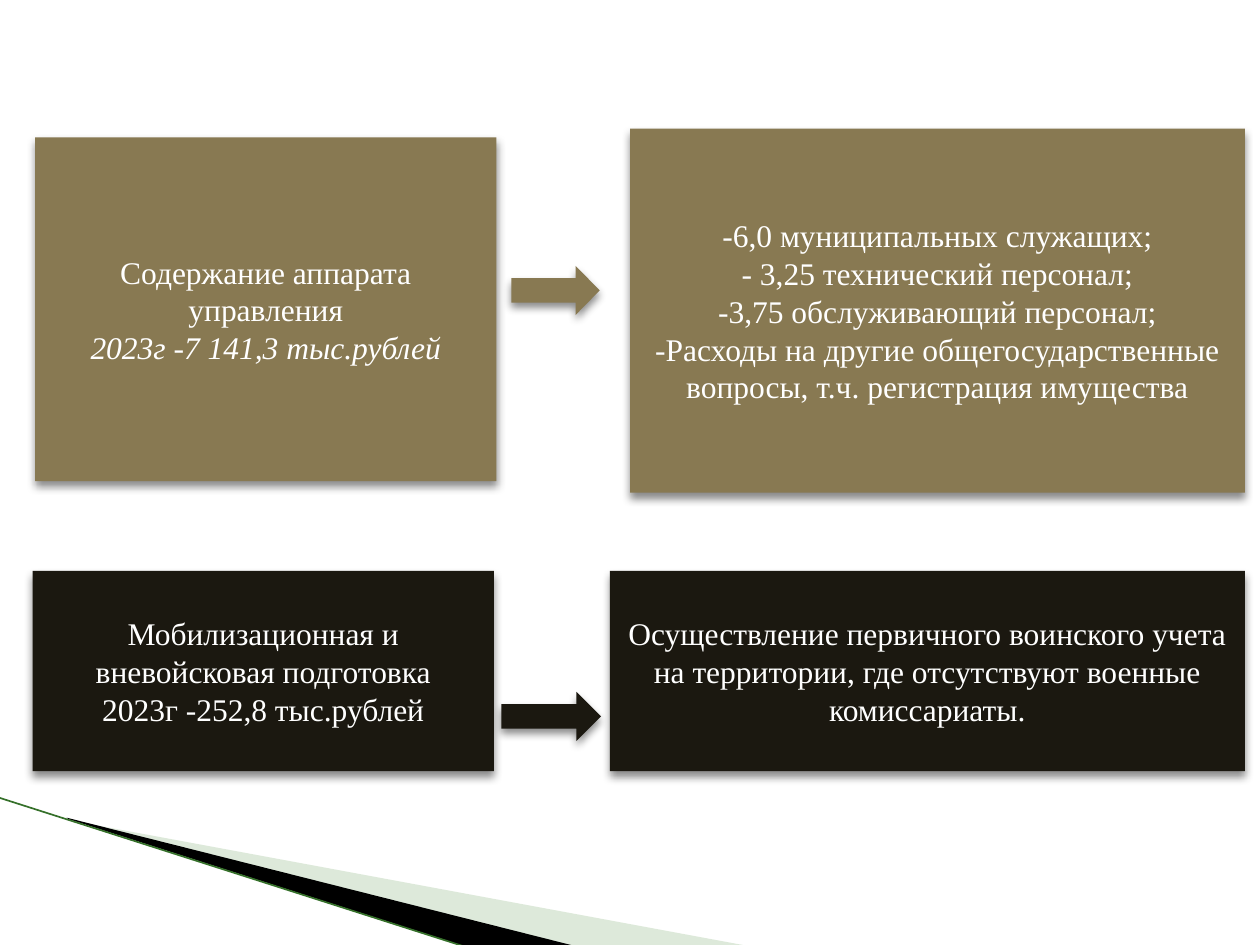
import lxml.etree
import pptx
import pptx.dml.color
import pptx.enum.shapes
import pptx.enum.text
import pptx.oxml.ns
import pptx.util

PX = 9144  # 100 px to the inch
THEME = {
    "olive": "887952", "dark": "1B1810", "text": "FFFFFF",
    "pale_wedge": "AACAA3", "black_wedge": "000000", "edge": "35702A",
    "shadow": "000000", "font": "Times New Roman", "size": 18,
}
qn = pptx.oxml.ns.qn
rgb = pptx.dml.color.RGBColor.from_string
PRESET = pptx.enum.shapes.MSO_SHAPE


def write(frame, text, size=THEME["size"], color=THEME["text"], italic_line=None):
    """Write centred lines into a frame, one paragraph each."""
    frame.word_wrap = True
    frame.vertical_anchor = pptx.enum.text.MSO_ANCHOR.MIDDLE
    for number, line in enumerate(text.split("\n")):
        paragraph = frame.paragraphs[0] if number == 0 else frame.add_paragraph()
        paragraph.alignment = pptx.enum.text.PP_ALIGN.CENTER
        run = paragraph.add_run()
        run.text = line
        run.font.name = THEME["font"]
        run.font.size = pptx.util.Pt(size)
        run.font.color.rgb = rgb(color)
        if number == italic_line:
            run.font.italic = True


def paint(shape, color, alpha=None, shadow=False):
    """Fill a shape without outline, optionally transparent or shadowed."""
    shape.fill.solid()
    shape.fill.fore_color.rgb = rgb(color)
    shape.line.fill.background()
    shape.shadow.inherit = False
    if alpha:
        fill_color = shape.fill._xPr.find(qn("a:solidFill"))[0]
        lxml.etree.SubElement(fill_color, qn("a:alpha"), val=str(alpha * 1000))
    if shadow:
        effects = shape._element.spPr.find(qn("a:effectLst"))
        outer = lxml.etree.SubElement(
            effects, qn("a:outerShdw"), blurRad=str(pptx.util.Pt(5)),
            dist=str(pptx.util.Pt(3)), dir="5400000", rotWithShape="0")
        tint = lxml.etree.SubElement(outer, qn("a:srgbClr"), val=THEME["shadow"])
        lxml.etree.SubElement(tint, qn("a:alpha"), val="45000")


deck = pptx.Presentation()
deck.slide_width, deck.slide_height = 1000 * PX, 750 * PX
slide = deck.slides.add_slide(deck.slide_layouts[6])
shapes = slide.shapes

# Corner wedges
wedges = [
    ([(55, 651), (595, 751), (456, 751), (55, 650)], THEME["pale_wedge"], 40),
    ([(53, 649), (457, 751), (372, 752), (54, 650)], THEME["black_wedge"], None),
]
for points, color, alpha in wedges:
    outline = shapes.build_freeform(*points[0], scale=PX)
    outline.add_line_segments(points[1:], close=True)
    paint(outline.convert_to_shape(), color, alpha=alpha)

# Green edge along the wedges
edge = shapes.add_connector(
    pptx.enum.shapes.MSO_CONNECTOR.STRAIGHT, -1 * PX, 633 * PX, 371 * PX, 752 * PX)
edge.line.color.rgb = rgb(THEME["edge"])
edge.line.width = pptx.util.Pt(0.95)
lxml.etree.SubElement(edge._element.spPr, qn("a:effectLst"))

# Expense cards on the left, their contents on the right
cards = [
    ((28, 109, 366, 273), THEME["olive"], 1,
     "Содержание аппарата управления\n2023г -7 141,3 тыс.рублей"),
    ((26, 453, 366, 159), THEME["dark"], None,
     "Мобилизационная и вневойсковая подготовка\n2023г -252,8 тыс.рублей"),
    ((500, 102, 488, 289), THEME["olive"], None,
     "-6,0 муниципальных служащих;\n- 3,25 технический персонал;\n"
     "-3,75 обслуживающий персонал;\n"
     "-Расходы на другие общегосударственные вопросы, т.ч. регистрация имущества"),
    ((484, 453, 504, 159), THEME["dark"], None,
     "Осуществление первичного воинского учета на территории, "
     "где отсутствуют военные комиссариаты."),
]
for box, color, italic_line, text in cards:
    card = shapes.add_shape(PRESET.RECTANGLE, *(side * PX for side in box))
    paint(card, color, shadow=True)
    write(card.text_frame, text, italic_line=italic_line)

# Arrows from expense to contents
for box, color, head in [((406, 211, 70, 39), THEME["olive"], 0.49),
                         ((398, 549, 79, 39), THEME["dark"], 0.5)]:
    arrow = shapes.add_shape(PRESET.RIGHT_ARROW, *(side * PX for side in box))
    arrow.adjustments[1] = head
    paint(arrow, color, shadow=True)

deck.save("out.pptx")
